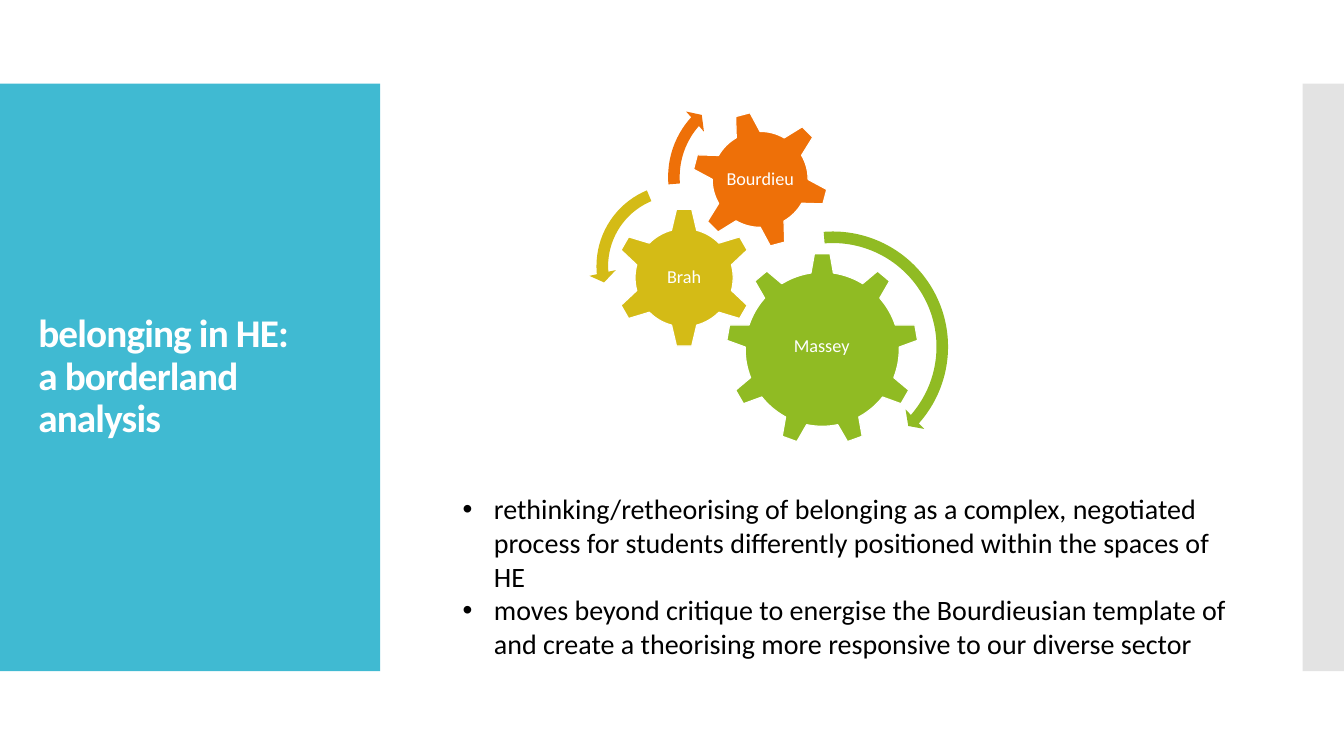
from lxml import etree
from pptx import Presentation
from pptx.dml.color import RGBColor
from pptx.enum.shapes import MSO_SHAPE
from pptx.enum.text import MSO_ANCHOR, MSO_AUTO_SIZE, PP_ALIGN
from pptx.oxml.ns import qn
from pptx.util import Inches, Pt

RECTANGLE = MSO_SHAPE.RECTANGLE
GEAR_6 = MSO_SHAPE.GEAR_6
GEAR_9 = MSO_SHAPE.GEAR_9
CLOCKWISE = MSO_SHAPE.CIRCULAR_ARROW
COUNTERCLOCKWISE = MSO_SHAPE.LEFT_CIRCULAR_ARROW
MIDDLE = MSO_ANCHOR.MIDDLE
LEFT = PP_ALIGN.LEFT
CENTER = PP_ALIGN.CENTER
GROW = MSO_AUTO_SIZE.SHAPE_TO_FIT_TEXT
NO_AUTOFIT = MSO_AUTO_SIZE.NONE

GREEN, YELLOW, ORANGE = "90BB23", "D4BB16", "EE7008"
WHITE = "FFFFFF"


def add_filled(kind, left, top, width, height, color):
    shape = slide.shapes.add_shape(kind, Inches(left), Inches(top), Inches(width), Inches(height))
    shape.shadow.inherit = False
    shape.fill.solid()
    shape.fill.fore_color.rgb = RGBColor.from_string(color)
    shape.line.fill.background()
    return shape


def set_font(paragraph, size, color):
    paragraph.font.name = "Calibri"
    paragraph.font.size = Pt(size)
    paragraph.font.color.rgb = RGBColor.from_string(color)


presentation = Presentation()
presentation.slide_width = Inches(13.33)
presentation.slide_height = Inches(7.5)
slide = presentation.slides.add_slide(presentation.slide_layouts[5])

title_panel = add_filled(RECTANGLE, 0, 0.83, 3.77, 5.83, "40BAD2")
edge_panel = add_filled(RECTANGLE, 12.92, 0.83, 0.41, 5.83, "C8C8C8")
edge_color = edge_panel.element.spPr.find(qn("a:solidFill"))[0]
etree.SubElement(edge_color, qn("a:alpha"), val="50000")

title = slide.shapes.title
edge_panel.element.addnext(title.element)
title.left, title.top, title.width, title.height = Inches(0.28), Inches(1.23), Inches(3.22), Inches(5.03)
title.text_frame.text = "belonging in HE: \va borderland analysis"
title.text_frame.vertical_anchor = MIDDLE
title.text_frame.word_wrap = True
title.text_frame.auto_size = NO_AUTOFIT
paragraph = title.text_frame.paragraphs[0]
paragraph.alignment = LEFT
paragraph.line_spacing = 0.9
set_font(paragraph, 28, WHITE)
paragraph.font.bold = True
for run in paragraph.runs:
    run.font.element.set("spc", "-60") if hasattr(run.font, "element") else run._r.get_or_add_rPr().set("spc", "-60")

gears = [
    ("Massey", GEAR_9, GREEN, 7.2, 2.51, 1.91, 0, (7.58, 2.95, 1.14, 0.98)),
    ("Brah", GEAR_6, YELLOW, 6.09, 2.06, 1.39, 0, (6.44, 2.41, 0.69, 0.69)),
    ("Bourdieu", GEAR_6, ORANGE, 6.86, 1.1, 1.36, 345, (7.16, 1.4, 0.76, 0.76)),
]
for name, kind, color, left, top, size, rotation, label_box in gears:
    gear = add_filled(kind, left, top, size, size, color)
    gear.rotation = rotation
    gear.line.color.rgb = RGBColor.from_string(WHITE)
    gear.line.width = Pt(0.85)
    label = slide.shapes.add_textbox(*map(Inches, label_box))
    frame = label.text_frame
    frame.word_wrap = True
    frame.vertical_anchor = MIDDLE
    frame.margin_left = frame.margin_right = frame.margin_top = frame.margin_bottom = Inches(0.02)
    paragraph = frame.paragraphs[0]
    paragraph.text = name
    paragraph.alignment = CENTER
    paragraph.line_spacing = 0.9
    paragraph.space_after = Pt(4.5)
    set_font(paragraph, 13, WHITE)

arrows = [
    (CLOCKWISE, GREEN, 7.04, 2.22, 2.44, (0.047, 2.99, 24.857, 159.286, 0.055)),
    (COUNTERCLOCKWISE, YELLOW, 5.84, 1.75, 1.78, (0.065, 4.3, 104.891, 148.378, 0.075)),
    (CLOCKWISE, ORANGE, 6.55, 0.8, 1.91, (0.06, 3.941, 133.138, 105.082, 0.07)),
]
for kind, color, left, top, size, adjustments in arrows:
    arrow = add_filled(kind, left, top, size, size, color)
    for index, value in enumerate(adjustments):
        arrow.adjustments[index] = value

points = [
    "rethinking/retheorising of belonging as a complex, negotiated process for students "
    "differently positioned within the spaces of HE",
    "moves beyond critique to energise the Bourdieusian template of and create a theorising "
    "more responsive to our diverse sector",
]
summary = slide.shapes.add_textbox(Inches(4.49), Inches(4.83), Inches(7.92), Inches(1.78))
frame = summary.text_frame
frame.word_wrap = True
frame.auto_size = GROW
frame.text = "\n".join(points)
for paragraph in frame.paragraphs:
    set_font(paragraph, 20, "000000")
    properties = paragraph._p.get_or_add_pPr()
    properties.set("marL", str(Inches(0.31)))
    properties.set("indent", str(Inches(-0.31)))
    bullet_font = etree.Element(qn("a:buFont"), typeface="Arial")
    bullet = etree.Element(qn("a:buChar"), char="•")
    properties.insert(0, bullet_font)
    bullet_font.addnext(bullet)

presentation.save("out.pptx")
